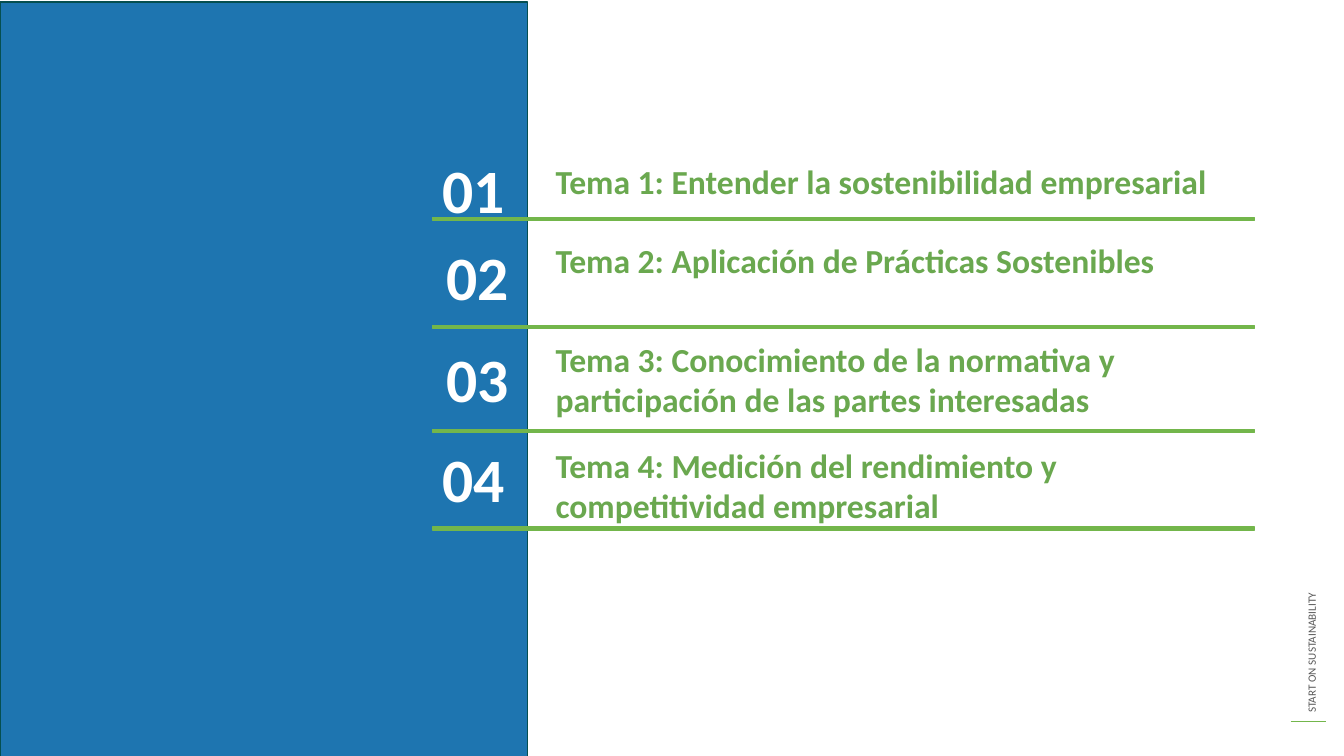
from lxml import etree
from pptx import Presentation
from pptx.dml.color import RGBColor
from pptx.enum.shapes import MSO_CONNECTOR, MSO_SHAPE
from pptx.enum.text import MSO_ANCHOR, MSO_AUTO_SIZE
from pptx.oxml.ns import qn
from pptx.util import Inches, Pt

STRAIGHT = MSO_CONNECTOR.STRAIGHT
RECTANGLE = MSO_SHAPE.RECTANGLE
TOP = MSO_ANCHOR.TOP
NO_AUTOFIT = MSO_AUTO_SIZE.NONE

BLUE = RGBColor(0x1E, 0x75, 0xB0)
DARK_TEAL = RGBColor(0x05, 0x4F, 0x50)
LINE_GREEN = RGBColor(0x73, 0xB6, 0x4B)
TEXT_GREEN = RGBColor(0x6A, 0xA8, 0x4F)
GREY = RGBColor(0x59, 0x59, 0x59)
WHITE = RGBColor(0xFF, 0xFF, 0xFF)

FONT = "Calibri"
COMPARISON_LAYOUT = 4  # a title and four text areas

# Topic lines, topic box, topic spacing, number left and top, divider top
AGENDA = [
    (["Tema 1: Entender la sostenibilidad empresarial"],
     (5.41, 1.49, 7.18, 0.37), 1.15, (4.29, 1.24), 2.16),
    (["Tema 2: Aplicación de Prácticas Sostenibles"],
     (5.41, 2.33, 7.18, 0.37), 1, (4.33, 2.1), 3.23),
    (["Tema 3: Conocimiento de la normativa y",
      "participación de las partes interesadas"],
     (5.41, 3.31, 7.64, 0.45), 1, (4.33, 3.11), 4.26),
    (["Tema 4: Medición del rendimiento y competitividad empresarial"],
     (5.41, 4.36, 7.18, 0.37), 1, (4.29, 4.11), 5.23),
]


def place(part, box):
    part.left, part.top, part.width, part.height = map(Inches, box)


def write(part, lines, size, color, bold=True, spacing=1):
    frame = part.text_frame
    frame.word_wrap = True
    frame.auto_size = NO_AUTOFIT
    frame.vertical_anchor = TOP
    for index, line in enumerate(lines):
        paragraph = frame.add_paragraph() if index else frame.paragraphs[0]
        paragraph.line_spacing = spacing
        paragraph.space_before = Pt(0)
        properties = paragraph._p.get_or_add_pPr()
        properties.set("marL", "0")
        properties.set("indent", "0")
        etree.SubElement(properties, qn("a:buNone"))
        run = paragraph.add_run()
        run.text = line
        run.font.name = FONT
        run.font.size = Pt(size)
        run.font.bold = bold
        run.font.color.rgb = color


def add_bar(slide, box, fill, outline):
    bar = slide.shapes.add_shape(RECTANGLE, *map(Inches, box))
    bar.shadow.inherit = False
    bar.fill.solid()
    bar.fill.fore_color.rgb = fill
    bar.line.color.rgb = outline
    bar.line.width = Pt(1)


def add_footer(slide, center_x, center_y, length):
    """Sideways programme name above a short green rule."""
    height = 0.24
    programme = slide.shapes.add_textbox(
        Inches(center_x - length / 2), Inches(center_y - height / 2),
        Inches(length), Inches(height))
    programme.rotation = 270
    write(programme, ["START ON SUSTAINABILITY"], 8, GREY, bold=False)

    rule_y = Inches(center_y + length / 2 - 0.01)
    rule = slide.shapes.add_connector(
        STRAIGHT, Inches(center_x - 0.21), rule_y, Inches(center_x + 0.14), rule_y)
    rule.line.color.rgb = LINE_GREEN
    rule.line.width = Pt(1)
    etree.SubElement(rule._element.spPr, qn("a:effectLst"))


def add_agenda(slide, topics):
    """Numbered topics, each closed by a green divider."""
    for order, (topic, entry) in enumerate(zip(topics, AGENDA), start=1):
        lines, topic_box, spacing, number_corner, divider_top = entry
        place(topic, topic_box)
        write(topic, lines, 24, TEXT_GREEN, spacing=spacing)

        number = slide.shapes.add_textbox(
            *map(Inches, (*number_corner, 1.35, 1.05)))
        write(number, [f"{order:02}"], 44, WHITE, spacing=1.3)

        add_bar(slide, (4.29, divider_top, 8.15, 0.03), LINE_GREEN, LINE_GREEN)


def main():
    deck = Presentation()
    deck.slide_width, deck.slide_height = Inches(13.33), Inches(7.5)
    slide = deck.slides.add_slide(deck.slide_layouts[COMPARISON_LAYOUT])

    # The agenda has no title
    title = slide.shapes.title._element
    title.getparent().remove(title)
    topics = list(slide.placeholders)

    add_footer(slide, 13.01, 4.94, 4.46)
    # Blue side panel
    add_bar(slide, (0, 0.02, 5.23, 7.5), BLUE, DARK_TEAL)
    add_agenda(slide, topics)
    deck.save("out.pptx")


if __name__ == "__main__":
    main()
